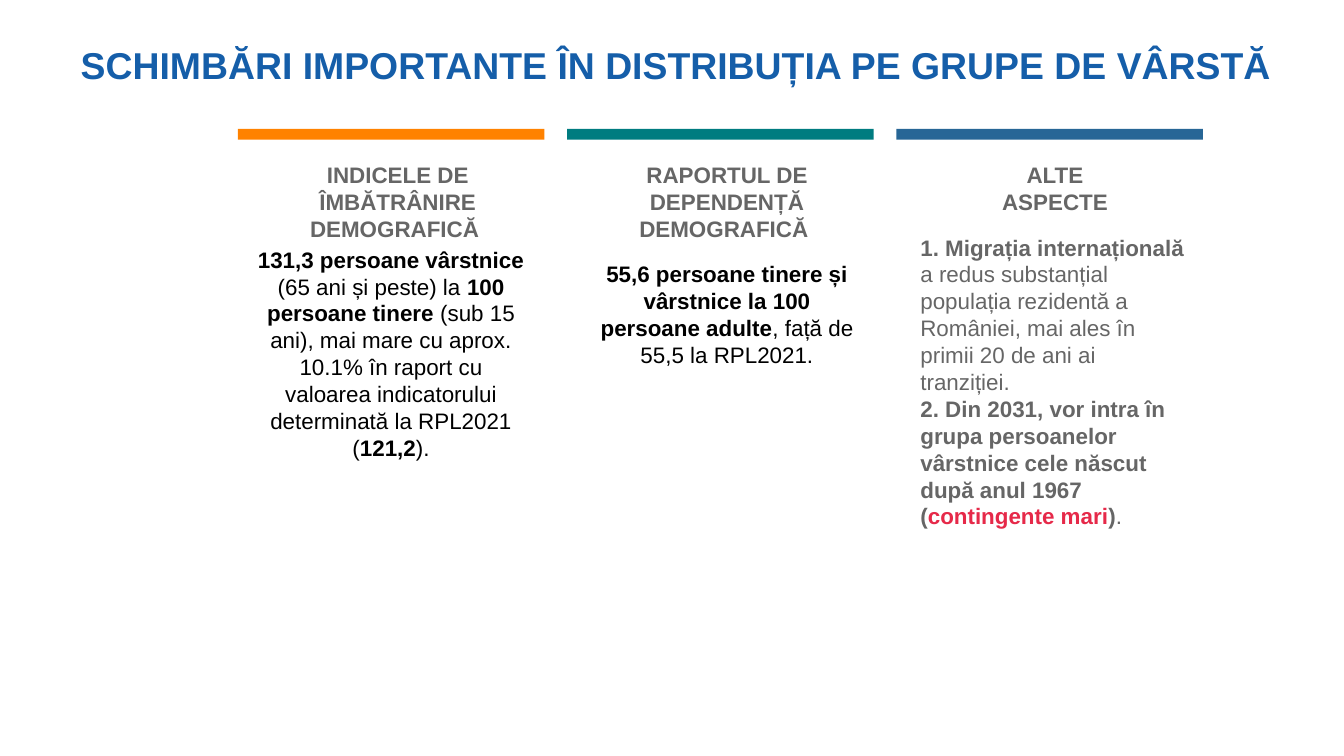
import pptx
import pptx.dml.color
import pptx.enum.shapes
import pptx.enum.text
import pptx.util

RGBColor = pptx.dml.color.RGBColor
Inches = pptx.util.Inches
Align = pptx.enum.text.PP_ALIGN
Anchor = pptx.enum.text.MSO_ANCHOR

BLUE = RGBColor(0x15, 0x5E, 0xA9)
ORANGE = RGBColor(0xFF, 0x82, 0x00)
TEAL = RGBColor(0x00, 0x7C, 0x80)
STEEL = RGBColor(0x27, 0x66, 0x96)
GRAY = RGBColor(0x66, 0x66, 0x66)
BLACK = RGBColor(0x00, 0x00, 0x00)
RED = RGBColor(0xE6, 0x29, 0x49)

SLIDE_WIDTH = 10
SLIDE_HEIGHT = SLIDE_WIDTH * 9 / 16
FIRST_COLUMN, COLUMN_PITCH = 1.77, 2.45
BAR_TOP, BAR_WIDTH, BAR_HEIGHT = 0.96, 2.28, 0.08
TEXT_WIDTH, HEADING_TOP = 2.2, 1.15
LINE_HEIGHT, PADDING = 0.2, 0.1

BOLD = {"bold": True}
PLAIN = {"bold": False}

TOPICS = [
    {
        "color": ORANGE,
        "heading": ["INDICELE DE ÎMBĂTRÂNIRE DEMOGRAFICĂ "],
        "heading_lines": 3,
        "heading_inset": 0.09,
        "body": [[
            ("131,3 persoane vârstnice ", BOLD),
            ("(65 ani și peste) la ", PLAIN),
            ("100 persoane tinere ", BOLD),
            ("(sub 15 ani), mai mare cu aprox. 10.1% în raport cu valoarea "
             "indicatorului determinată la RPL2021 (", PLAIN),
            ("121,2", BOLD),
            (").", PLAIN),
        ]],
        "body_top": 1.78,
        "body_lines": 8,
        "body_inset": 0.04,
        "body_format": {"color": BLACK, "align": Align.CENTER},
    },
    {
        "color": TEAL,
        "heading": ["RAPORTUL DE DEPENDENȚĂ DEMOGRAFICĂ "],
        "heading_lines": 3,
        "heading_inset": 0.09,
        "body": [[
            ("55,6 persoane tinere și vârstnice la 100 persoane adulte", BOLD),
            (", față de 55,5 la RPL2021.", PLAIN),
        ]],
        "body_top": 1.89,
        "body_lines": 4,
        "body_inset": 0.09,
        "body_format": {"color": BLACK, "align": Align.CENTER},
    },
    {
        "color": STEEL,
        "heading": ["ALTE", "ASPECTE"],
        "heading_lines": 2,
        "heading_inset": 0.08,
        "body": [
            [
                ("1. Migrația internațională ", BOLD),
                ("a redus substanțial populația rezidentă a României, mai ales "
                 "în primii 20 de ani ai tranziției.", PLAIN),
            ],
            [
                ("2. Din 2031, vor intra în grupa persoanelor vârstnice cele "
                 "născut după anul 1967 (", BOLD),
                ("contingente mari", {"bold": True, "color": RED}),
                (")", BOLD),
                (".", PLAIN),
            ],
        ],
        "body_top": 1.69,
        "body_lines": 11,
        "body_inset": 0.08,
        "body_format": {"color": GRAY, "align": Align.LEFT},
    },
]


def write_text(frame, paragraphs, size=12, color=GRAY, bold=True,
               align=Align.CENTER, anchor=Anchor.TOP):
    frame.word_wrap = True
    frame.auto_size = pptx.enum.text.MSO_AUTO_SIZE.NONE
    frame.vertical_anchor = anchor
    for index, content in enumerate(paragraphs):
        paragraph = frame.add_paragraph() if index else frame.paragraphs[0]
        paragraph.alignment = align
        pieces = [(content, {})] if isinstance(content, str) else content
        for words, emphasis in pieces:
            run = paragraph.add_run()
            run.text = words
            run.font.name = "Arial"
            run.font.size = pptx.util.Pt(size)
            run.font.bold = emphasis.get("bold", bold)
            run.font.color.rgb = emphasis.get("color", color)


def add_title(slide, words):
    title = slide.shapes.title
    title.left, title.top = Inches(0.5), 0
    title.width, title.height = Inches(SLIDE_WIDTH - 0.5), Inches(0.96)
    write_text(title.text_frame, [words], size=20, color=BLUE,
               align=Align.LEFT, anchor=Anchor.MIDDLE)


def add_bar(slide, left, color):
    bar = slide.shapes.add_shape(
        pptx.enum.shapes.MSO_SHAPE.RECTANGLE, Inches(left), Inches(BAR_TOP),
        Inches(BAR_WIDTH), Inches(BAR_HEIGHT))
    bar.shadow.inherit = False
    bar.fill.solid()
    bar.fill.fore_color.rgb = color
    bar.line.fill.background()


def add_text(slide, left, top, lines, paragraphs, **text_format):
    box = slide.shapes.add_textbox(
        Inches(left), Inches(top), Inches(TEXT_WIDTH),
        Inches(lines * LINE_HEIGHT + PADDING))
    write_text(box.text_frame, paragraphs, **text_format)


def add_topic(slide, column, topic):
    left = FIRST_COLUMN + column * COLUMN_PITCH
    add_bar(slide, left, topic["color"])
    add_text(slide, left + topic["body_inset"], topic["body_top"],
             topic["body_lines"], topic["body"], **topic["body_format"])
    add_text(slide, left + topic["heading_inset"], HEADING_TOP,
             topic["heading_lines"], topic["heading"])


def main():
    presentation = pptx.Presentation()
    presentation.slide_width = Inches(SLIDE_WIDTH)
    presentation.slide_height = Inches(SLIDE_HEIGHT)
    slide = presentation.slides.add_slide(presentation.slide_layouts[5])
    add_title(slide, "SCHIMBĂRI IMPORTANTE ÎN DISTRIBUȚIA PE GRUPE DE VÂRSTĂ")
    for column, topic in enumerate(TOPICS):
        add_topic(slide, column, topic)
    presentation.save("out.pptx")


if __name__ == "__main__":
    main()
